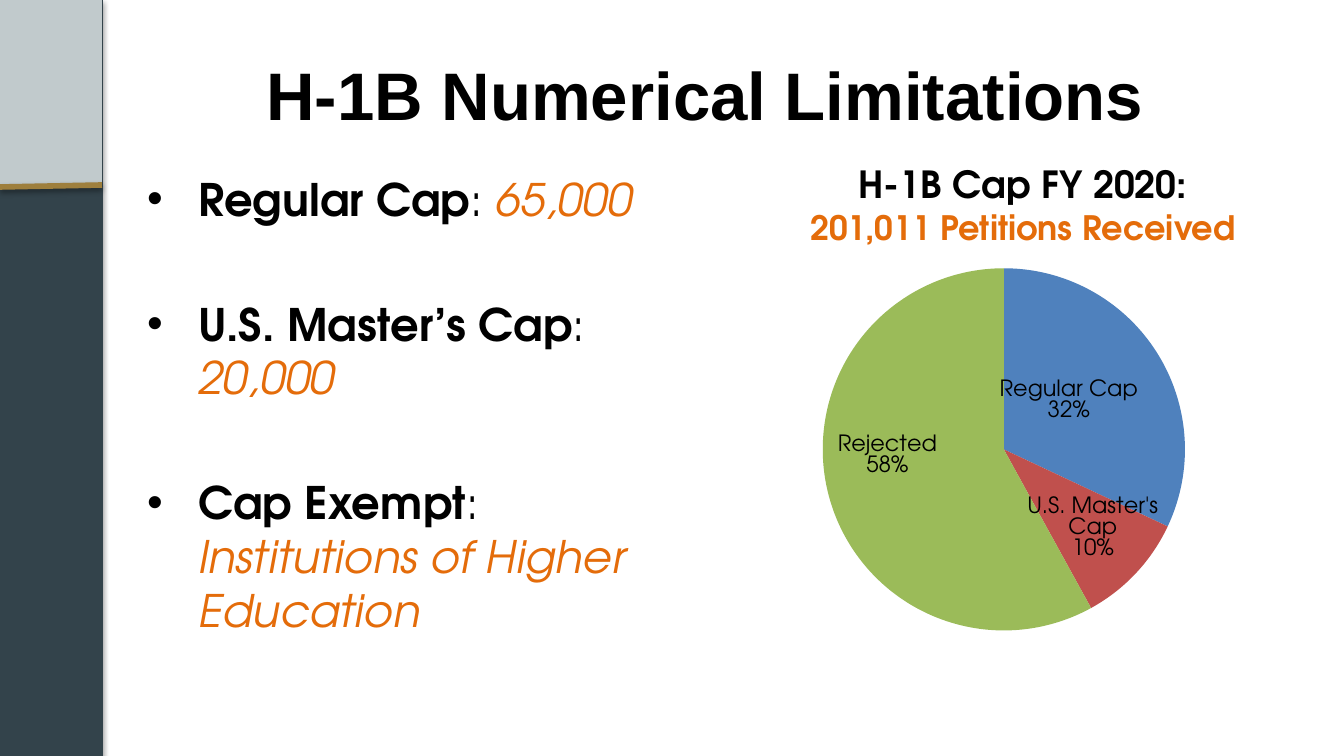
"""Build the H-1B numerical limitations slide with a cap list and a pie chart."""
from lxml import etree
from pptx import Presentation
from pptx import util as u
from pptx.chart.data import CategoryChartData
from pptx.dml.color import RGBColor
from pptx.enum import chart as charts, shapes, text
from pptx.oxml import parse_xml
from pptx.oxml.ns import nsdecls, qn

SCALE = 914400 / 134.4
BLACK, ORANGE = "000000", "E46C0A"
SLATE, SILVER, GOLD = "33434B", "C1CACC", "9E7F3D"
FONT = "TeX Gyre Adventor"

TITLE = "H-1B Numerical Limitations"
CAPS = [
    ("Regular Cap", "65,000"),
    ("U.S. Master’s Cap", "20,000"),
    ("Cap Exempt", "Institutions of Higher Education"),
]
CAPTION = [("H-1B Cap FY 2020:", 20, BLACK), ("201,011 Petitions Received", 18, ORANGE)]
SLICES = [
    ("Regular Cap", 32, "4F81BD", (-0.02, 0)),
    ("U.S. Master's Cap", 10, "C0504D", (0.04, 0.03)),
    ("Rejected", 58, "9BBB59", (-0.05, -0.03)),
]
PIE_AREA = {"x": 0.21, "y": 0.13, "w": 0.63, "h": 0.66}


def px(length):
    return u.Emu(round(length * SCALE))


def frame(*lengths):
    return [px(length) for length in lengths]


def color(value):
    return RGBColor.from_string(value)


def add_text(para, words, size=24, fill=BLACK, font=FONT, bold=False, italic=False):
    span = para.add_run()
    span.text = words
    span.font.size, span.font.name = u.Pt(size), font
    span.font.bold, span.font.italic = bold, italic
    span.font.color.rgb = color(fill)


def add_shadow(shape, alpha, blur, distance):
    shape._element.spPr.append(parse_xml(
        f'<a:effectLst {nsdecls("a")}><a:outerShdw blurRad="{u.Pt(blur)}" '
        f'dist="{u.Pt(distance)}" dir="5400000" rotWithShape="0"><a:srgbClr val="{BLACK}">'
        f'<a:alpha val="{alpha * 1000}"/></a:srgbClr></a:outerShdw></a:effectLst>'))


def add_panel(page, height, fill):
    panel = page.shapes.add_shape(shapes.MSO_SHAPE.RECTANGLE, *frame(0, 0, 102, height))
    panel.fill.solid()
    panel.fill.fore_color.rgb = color(fill)
    return panel


def add_sidebar(page):
    tall = add_panel(page, 756, SLATE)
    tall.line.color.rgb, tall.line.width = color(SLATE), u.Pt(0.75)
    add_shadow(tall, 35, 3.1, 1.8)
    top = add_panel(page, 185, SILVER)
    top.line.fill.background()
    top.shadow.inherit = False
    rule = page.shapes.add_connector(shapes.MSO_CONNECTOR.STRAIGHT, *frame(0, 187, 102, 185))
    rule.line.color.rgb, rule.line.width = color(GOLD), u.Pt(3)
    add_shadow(rule, 38, 3.1, 1.6)


def add_title(page):
    title = page.shapes.title
    title.left, title.top, title.width, title.height = frame(133, 31, 1144, 126)
    title.text_frame.vertical_anchor = text.MSO_ANCHOR.MIDDLE
    para = title.text_frame.paragraphs[0]
    para.alignment = text.PP_ALIGN.CENTER
    add_text(para, TITLE, size=36, font="Arial", bold=True)


def add_box(page, area, count):
    box = page.shapes.add_textbox(*frame(*area)).text_frame
    box.word_wrap = True
    for _ in range(count - 1):
        box.add_paragraph()
    return box.paragraphs


def add_caps(page):
    paras = add_box(page, (134, 165, 550, 515), len(CAPS))
    for index, (para, (name, limit)) in enumerate(zip(paras, CAPS)):
        para.space_before = u.Pt(38 if index else 5)
        props = para._p.get_or_add_pPr()
        props.set("marL", str(px(51)))
        props.set("indent", str(-px(51)))
        etree.SubElement(props, qn("a:buFont")).set("typeface", "Arial")
        etree.SubElement(props, qn("a:buChar")).set("char", "•")
        add_text(para, name, bold=True)
        add_text(para, ": ")
        add_text(para, limit, fill=ORANGE, italic=True)


def add_caption(page):
    paras = add_box(page, (769, 155, 508, 99), len(CAPTION))
    for para, (words, size, fill) in zip(paras, CAPTION):
        para.alignment = text.PP_ALIGN.CENTER
        add_text(para, words, size=size, fill=fill, bold=True)


def layout_xml(**places):
    target = '<c:layoutTarget val="inner"/>' if "w" in places else ""
    modes = '<c:xMode val="edge"/><c:yMode val="edge"/>' if target else ""
    values = "".join(f'<c:{key} val="{value}"/>' for key, value in places.items())
    return parse_xml(f'<c:layout {nsdecls("c")}><c:manualLayout>{target}{modes}{values}'
                     '</c:manualLayout></c:layout>')


def format_label(label):
    label.font.size, label.font.name = u.Pt(12), FONT
    label.font.color.rgb = color(BLACK)
    label.position = charts.XL_LABEL_POSITION.CENTER


def show_name_and_percent(element):
    for key in ("Val", "CatName", "Percent", "SerName", "LegendKey"):
        for flag in element.findall(qn(f"c:show{key}")):
            flag.set("val", "1" if key in ("CatName", "Percent") else "0")
    separator = etree.Element(qn("c:separator"))
    separator.text = "\n"
    last = element.find(qn("c:showBubbleSize"))
    if last is None:
        last = element.find(qn("c:showPercent"))
    last.addnext(separator)


def add_pie(page):
    data = CategoryChartData()
    data.categories = [name for name, *_ in SLICES]
    data.add_series("Series 1", [value for _, value, *_ in SLICES])
    chart = page.shapes.add_chart(
        charts.XL_CHART_TYPE.PIE, *frame(702, 196, 575, 551), data).chart
    chart.has_legend = chart.has_title = False
    chart.font.size, chart.font.name = u.Pt(16), "Karla"
    chart.font.color.rgb = color(BLACK)
    plot = chart.plots[0]
    plot.vary_by_categories = True
    area = chart._chartSpace.chart.plotArea
    for old in area.findall(qn("c:layout")):
        area.remove(old)
    area.insert(0, layout_xml(**PIE_AREA))

    series = plot.series[0]
    labels = series.data_labels
    format_label(labels)
    labels.show_value = False
    labels.show_category_name = labels.show_percentage = True
    for index, (_, _, fill, (right, down)) in enumerate(SLICES):
        point = series.points[index]
        point.format.fill.solid()
        point.format.fill.fore_color.rgb = color(fill)
        format_label(point.data_label)
        element = labels._element.findall(qn("c:dLbl"))[index]
        element.insert(1, layout_xml(x=right, y=down))
        show_name_and_percent(element)
    show_name_and_percent(labels._element)


def main():
    deck = Presentation()
    deck.slide_width, deck.slide_height = frame(1344, 756)
    page = deck.slides.add_slide(deck.slide_layouts[5])
    add_sidebar(page)
    add_title(page)
    add_caps(page)
    add_pie(page)
    add_caption(page)
    deck.save("out.pptx")


if __name__ == "__main__":
    main()
